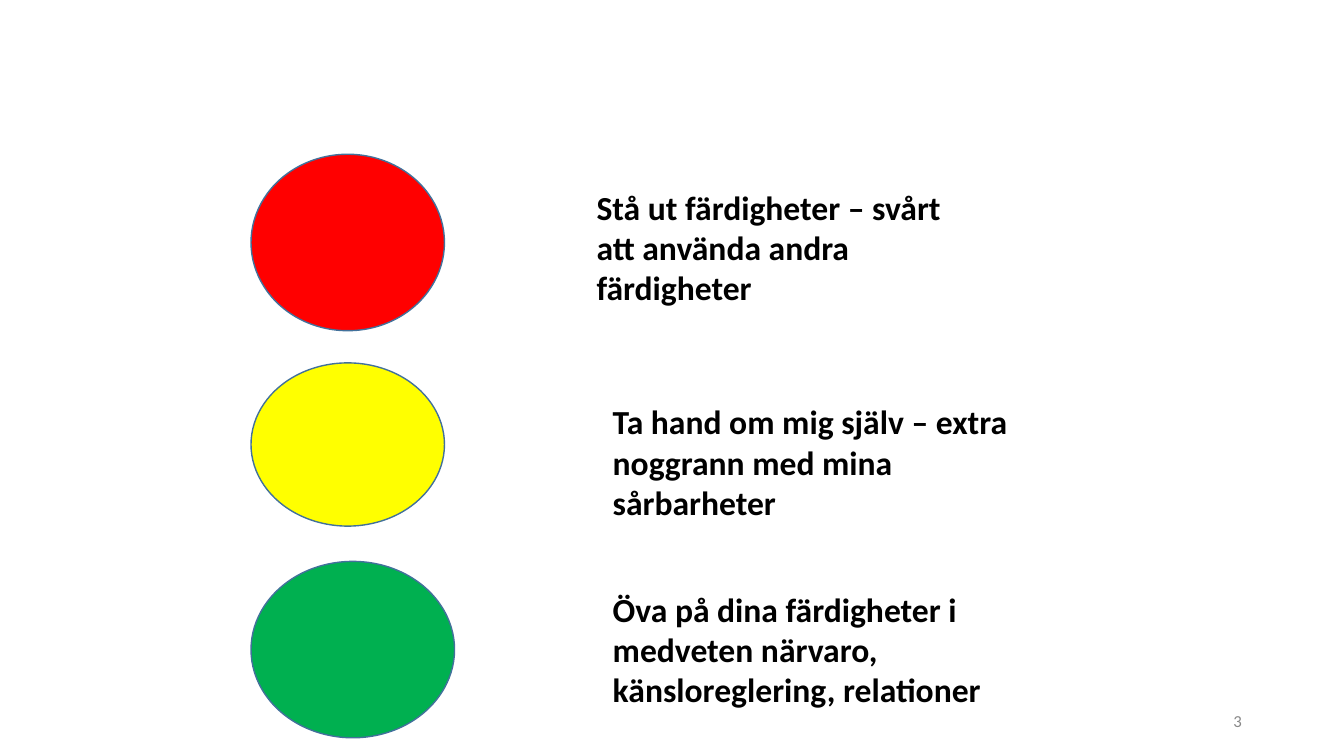
"""Build a traffic-light slide that pairs each light with its skills."""
from pptx import Presentation
from pptx.dml.color import RGBColor
from pptx.enum.shapes import MSO_SHAPE
from pptx.enum.text import MSO_ANCHOR, MSO_AUTO_SIZE, PP_ALIGN

OVAL = MSO_SHAPE.OVAL
MIDDLE = MSO_ANCHOR.MIDDLE
GROW = MSO_AUTO_SIZE.SHAPE_TO_FIT_TEXT
RIGHT = PP_ALIGN.RIGHT

from pptx.util import Pt

RED = RGBColor(0xFF, 0x00, 0x00)
YELLOW = RGBColor(0xFF, 0xFF, 0x00)
GREEN = RGBColor(0x00, 0xB0, 0x50)
OUTLINE = RGBColor(0x42, 0x71, 0x9B)
BLACK = RGBColor(0x00, 0x00, 0x00)
GREY = RGBColor(0x88, 0x88, 0x88)

LIGHT_LEFT = 179.3
TEXT_HEIGHT = 94.3


def add_text(slide, text, left, top, width, height, size, color, bold=False):
    s = slide.shapes.add_textbox(Pt(left), Pt(top), Pt(width), Pt(height))
    tf = s.text_frame
    tf.word_wrap = True
    tf.text = text
    font = tf.paragraphs[0].runs[0].font
    font.name = "Calibri"
    font.size = Pt(size)
    font.bold = bold
    font.color.rgb = color
    return tf


prs = Presentation()
prs.slide_width = Pt(960)
prs.slide_height = Pt(540)
slide = prs.slides.add_slide(prs.slide_layouts[6])

lights = [
    (RED, 110.2, 138.2, 126, "Stå ut färdigheter – svårt att använda andra färdigheter", 419, 129.6, 262),
    (YELLOW, 259.2, 138.2, 116.6, "Ta hand om mig själv – extra noggrann med mina sårbarheter", 430.6, 283, 302.4),
    (GREEN, 401, 145.4, 126, "Öva på dina färdigheter i medveten närvaro, känsloreglering, relationer", 430.6, 416.9, 331.2),
]
for color, top, width, height, text, text_left, text_top, text_width in lights:
    s = slide.shapes.add_shape(OVAL, Pt(LIGHT_LEFT), Pt(top), Pt(width), Pt(height))
    s.shadow.inherit = False
    s.fill.solid()
    s.fill.fore_color.rgb = color
    s.line.color.rgb = OUTLINE
    s.line.width = Pt(1)
    tf = add_text(slide, text, text_left, text_top, text_width, TEXT_HEIGHT, 24, BLACK, True)
    tf.auto_size = GROW

tf = add_text(slide, "3", 678.2, 500.4, 216, 28.8, 12, GREY)
tf.vertical_anchor = MIDDLE
tf.paragraphs[0].alignment = RIGHT

prs.save("out.pptx")
